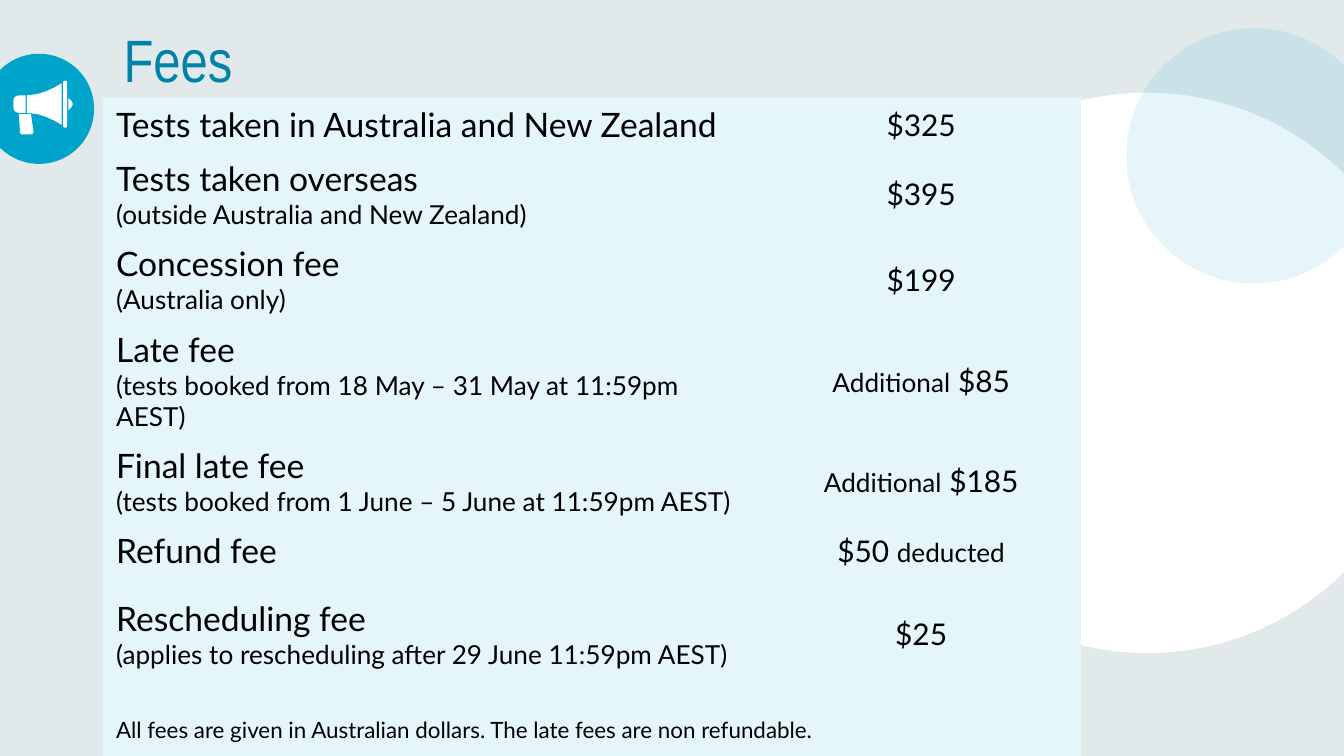
from dataclasses import dataclass

from lxml import etree
from pptx import Presentation
from pptx.dml.color import RGBColor
from pptx.enum.shapes import MSO_SHAPE
from pptx.enum.text import MSO_ANCHOR, MSO_AUTO_SIZE, PP_ALIGN
from pptx.oxml.ns import qn
from pptx.util import Pt

CHORD = MSO_SHAPE.CHORD
MIDDLE = MSO_ANCHOR.MIDDLE
LEFT, CENTER = PP_ALIGN.LEFT, PP_ALIGN.CENTER
NO_AUTOFIT = MSO_AUTO_SIZE.NONE
TITLE_ONLY = 5
PLAIN_TABLE_STYLE = "{2D5ABB26-0587-4C30-8999-92F81FD0307C}"
LINE_BREAK = "\v"


@dataclass(frozen=True)
class Theme:
    background: str = "E1E9EB"
    white: str = "FFFFFF"
    accent: str = "00A4CA"
    title: str = "0082A9"
    panel: str = "E5F6FA"
    text: str = "000000"
    title_font: str = "Arial Narrow"
    body_font: str = "Lato"
    title_size: int = 32
    item_size: int = 18
    amount_size: int = 16
    detail_size: int = 14
    note_size: int = 12


class SlideBuilder:
    def __init__(self, slide, theme):
        self.slide = slide
        self.theme = theme
        self.fill(slide.background, theme.background)

    def fill(self, target, color):
        target.fill.solid()
        target.fill.fore_color.rgb = RGBColor.from_string(color)

    def style(self, run, size, font, color):
        run.font.size = Pt(size)
        run.font.name = font
        run.font.color.rgb = RGBColor.from_string(color)

    def title(self, text, left, top, width, height):
        shape = self.slide.shapes.title
        shape.left, shape.top = Pt(left), Pt(top)
        shape.width, shape.height = Pt(width), Pt(height)
        frame = shape.text_frame
        frame.text = text
        frame.auto_size = NO_AUTOFIT
        frame.vertical_anchor = MIDDLE
        frame.margin_left = frame.margin_right = 0
        frame.margin_top = frame.margin_bottom = 0
        paragraph = frame.paragraphs[0]
        paragraph.alignment = LEFT
        paragraph.line_spacing = 0.9
        self.style(paragraph.runs[0], self.theme.title_size,
                   self.theme.title_font, self.theme.title)

    def cut_circle(self, left, top, diameter, color, alpha=None, rotation=0):
        """A circle with its right side cut off by a vertical chord."""
        shape = self.slide.shapes.add_shape(
            CHORD, Pt(left), Pt(top), Pt(diameter), Pt(diameter))
        shape.adjustments[0] = 27
        shape.adjustments[1] = 189
        shape.rotation = rotation
        shape.shadow.inherit = False
        shape.line.fill.background()
        self.fill(shape, color)
        if alpha is not None:
            color_element = shape._element.spPr.find(
                f"{qn('a:solidFill')}/{qn('a:srgbClr')}")
            etree.SubElement(color_element, qn("a:alpha"), val=str(alpha * 1000))

    def icon(self, outlines, color):
        group = self.slide.shapes.add_group_shape()
        for outline in outlines:
            points = [(Pt(x), Pt(y)) for x, y in outline]
            builder = group.shapes.build_freeform(*points[0])
            builder.add_line_segments(points[1:], close=True)
            shape = builder.convert_to_shape()
            shape.shadow.inherit = False
            shape.line.fill.background()
            self.fill(shape, color)

    def cell(self, cell, parts, alignment=LEFT):
        cell.vertical_anchor = MIDDLE
        paragraph = cell.text_frame.paragraphs[0]
        paragraph.alignment = alignment
        for part in parts:
            if part == LINE_BREAK:
                paragraph.add_line_break()
                continue
            text, size = part
            run = paragraph.add_run()
            run.text = text
            self.style(run, size, self.theme.body_font, self.theme.text)

    def fee_table(self, left, top, widths, heights, fees, note):
        theme = self.theme
        frame = self.slide.shapes.add_table(
            len(heights), len(widths), Pt(left), Pt(top),
            Pt(sum(widths)), Pt(sum(heights)))
        table = frame.table
        table.first_row = table.horz_banding = False
        next(frame._element.iter(qn("a:tableStyleId"))).text = PLAIN_TABLE_STYLE
        for column, width in zip(table.columns, widths):
            column.width = Pt(width)
        for row, height in zip(table.rows, heights):
            row.height = Pt(height)
        for cell in table.iter_cells():
            self.fill(cell, theme.panel)

        for index, (item, detail, amount) in enumerate(fees):
            parts = [(item, theme.item_size)]
            if detail:
                parts += [LINE_BREAK, (detail, theme.detail_size)]
            self.cell(table.cell(index, 0), parts)
            self.cell(table.cell(index, 1), amount, CENTER)

        last = len(heights) - 1
        note_cell = table.cell(last, 0)
        note_cell.merge(table.cell(last, 1))
        self.cell(note_cell, [(note, theme.note_size)])


def mirrored(upper, axis):
    """Close an outline with its reflection below a horizontal axis."""
    return upper + [(x, 2 * axis - y) for x, y in reversed(upper)]


def main():
    theme = Theme()
    presentation = Presentation()
    presentation.slide_width, presentation.slide_height = Pt(720), Pt(405)
    slide = presentation.slides.add_slide(presentation.slide_layouts[TITLE_ONLY])
    builder = SlideBuilder(slide, theme)

    # Background circles, cut at the slide edge
    builder.cut_circle(464.4, 49.7, 300.2, theme.white)
    builder.cut_circle(603.4, 15.1, 136.8, theme.accent, alpha=10)

    # Title
    builder.title("Fees", 66.2, 15.1, 519.8, 37.4)

    # Megaphone badge
    builder.cut_circle(-8.6, 28.8, 59, theme.accent, rotation=180)
    axis = 55.8
    handle = [(10.1, 61.2), (10.8, 71.3), (11.5, 72), (17, 72), (18, 71), (16.6, 61.2)]
    sound = mirrored([(36.7, 52.6), (38.2, 54), (38.9, 55.4)], axis)
    back = mirrored([(13.7, 51.1), (10.1, 51.1), (8.6, 51.5), (7.5, 52.6), (7.2, 54)], axis)
    horn = mirrored([(14.4, 51.1), (20.2, 50.4), (24.5, 49), (29.5, 46.8), (33.1, 44.6)], axis)
    rim = mirrored([(33.8, 43.9), (34.6, 43.2), (35.3, 43.2), (36, 43.9)], axis)
    builder.icon([handle, sound, back, horn, rim], theme.white)

    # Fee table
    amount, detail = theme.amount_size, theme.detail_size
    fees = [
        ("Tests taken in Australia and New Zealand", None, [("$325", amount)]),
        ("Tests taken overseas", "(outside Australia and New Zealand)", [("$395", amount)]),
        ("Concession fee", "(Australia only)", [("$199", amount)]),
        ("Late fee", "(tests booked from 18 May – 31 May at 11:59pm AEST)",
         [("Additional", detail), (" $85", amount)]),
        ("Final late fee", "(tests booked from 1 June – 5 June at 11:59pm AEST)",
         [("Additional", detail), (" $185", amount)]),
        ("Refund fee", None, [("$50 ", amount), ("deducted", detail)]),
        ("Rescheduling fee", "(applies to rescheduling after 29 June 11:59pm AEST)",
         [("$25", amount)]),
    ]
    single, double = 28.4, 44
    builder.fee_table(
        55, 52.5, [353, 171],
        [single, double, double, double, double, single, 60.5, 42], fees,
        "All fees are given in Australian dollars. The late fees are non refundable.")

    presentation.save("out.pptx")


if __name__ == "__main__":
    main()
